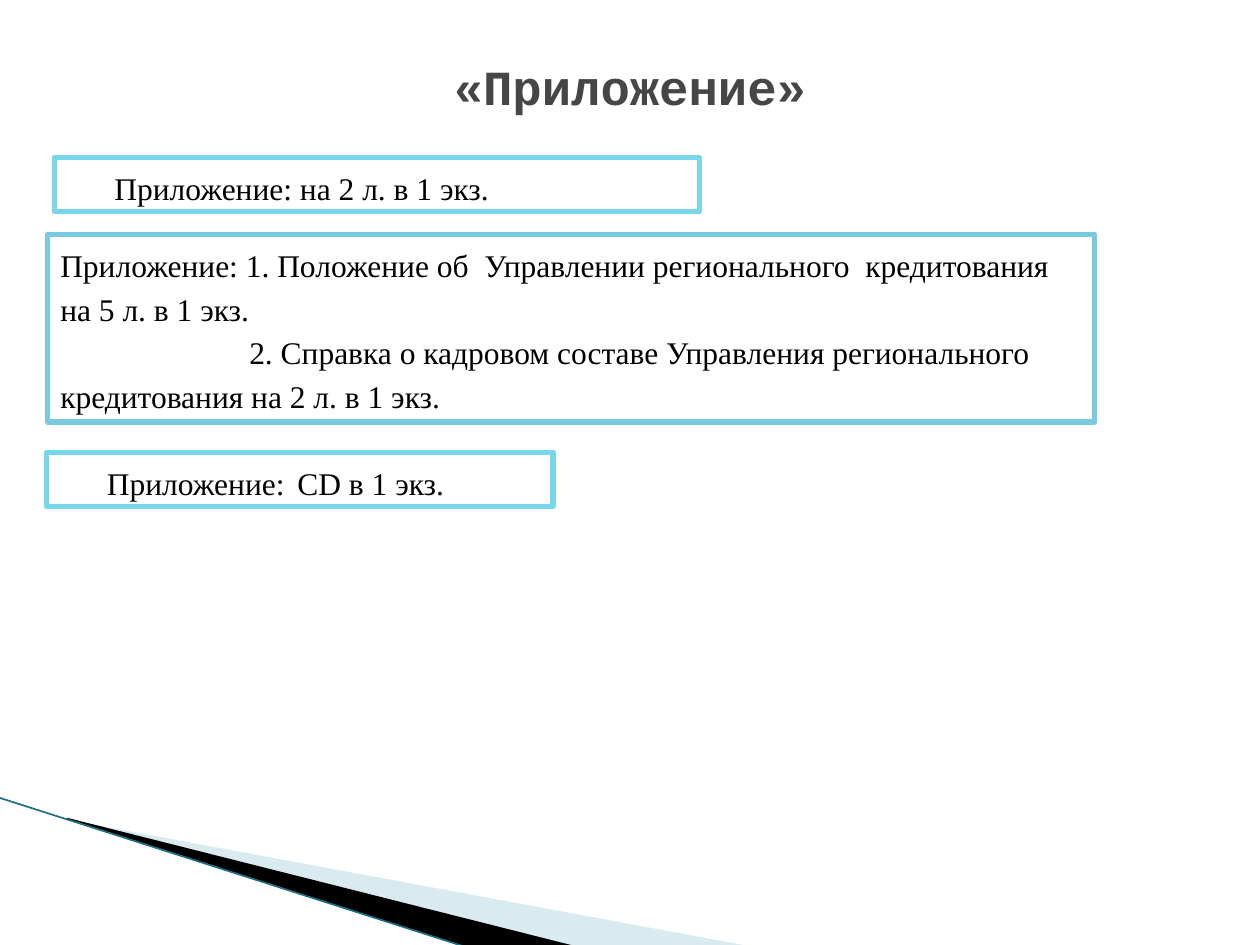
from dataclasses import dataclass

from lxml.etree import SubElement
from pptx import Presentation
from pptx.dml.color import RGBColor
from pptx.enum.shapes import MSO_CONNECTOR, MSO_SHAPE
from pptx.enum.text import MSO_ANCHOR, MSO_AUTO_SIZE, PP_ALIGN
from pptx.oxml.ns import qn
from pptx.util import Inches, Pt

WIDTH, HEIGHT = Inches(10), Inches(7.5)
SERIF = "Times New Roman"


@dataclass(frozen=True)
class Piece:
    text: str
    size: int = 18
    font: str = SERIF


@dataclass(frozen=True)
class Line:
    pieces: tuple[Piece, ...]
    indent: float = 0
    align: PP_ALIGN = PP_ALIGN.LEFT


@dataclass(frozen=True)
class Sample:
    left: float
    top: float
    width: float
    height: float
    border: str
    lines: tuple[Line, ...]


@dataclass(frozen=True)
class Wedge:
    corners: tuple[tuple[float, float], ...]
    color: str
    opacity: int = 100


def across(percent: float) -> int:
    return round(WIDTH * percent / 100)


def down(percent: float) -> int:
    return round(HEIGHT * percent / 100)


def rgb(color: str) -> RGBColor:
    return RGBColor.from_string(color)


def style_run(run, size: int, font: str, color: str, bold: bool = False) -> None:
    run.font.size = Pt(size)
    run.font.name = font
    run.font.bold = bold
    run.font.color.rgb = rgb(color)


def draw_wedge(slide, wedge: Wedge) -> None:
    points = [(across(x), down(y)) for x, y in wedge.corners]
    builder = slide.shapes.build_freeform(*points[0], scale=1.0)
    builder.add_line_segments(points[1:], close=True)
    facet = builder.convert_to_shape()
    facet.shadow.inherit = False
    facet.fill.solid()
    facet.fill.fore_color.rgb = rgb(wedge.color)
    facet.line.fill.background()
    if wedge.opacity < 100:
        tint = facet.fill._xPr.find(qn("a:solidFill"))[0]
        SubElement(tint, qn("a:alpha"), val=str(wedge.opacity * 1000))


def draw_edge(slide, start: tuple[float, float], end: tuple[float, float], color: str) -> None:
    edge = slide.shapes.add_connector(
        MSO_CONNECTOR.STRAIGHT, across(start[0]), down(start[1]), across(end[0]), down(end[1]))
    edge.line.color.rgb = rgb(color)
    edge.line.width = Pt(0.95)
    SubElement(edge._element.spPr, qn("a:effectLst"))


def draw_sample(slide, sample: Sample) -> None:
    frame = slide.shapes.add_shape(
        MSO_SHAPE.RECTANGLE, across(sample.left), down(sample.top),
        across(sample.width), down(sample.height))
    frame.shadow.inherit = False
    frame.fill.background()
    frame.line.color.rgb = rgb(sample.border)
    frame.line.width = Pt(3)
    SubElement(frame.line._get_or_add_ln(), qn("a:round"))
    body = frame.text_frame
    body.word_wrap = True
    body.auto_size = MSO_AUTO_SIZE.SHAPE_TO_FIT_TEXT
    body.vertical_anchor = MSO_ANCHOR.TOP
    for index, line in enumerate(sample.lines):
        paragraph = body.add_paragraph() if index else body.paragraphs[0]
        paragraph.alignment = line.align
        paragraph.line_spacing = 1.15
        paragraph._p.get_or_add_pPr().set("indent", str(across(line.indent)))
        for piece in line.pieces:
            run = paragraph.add_run()
            run.text = piece.text
            style_run(run, piece.size, piece.font, "000000")


def place_title(slide, text: str) -> None:
    title = slide.shapes.title
    title.left, title.top = across(5), down(4)
    title.width, title.height = across(90), down(10.27)
    title.text_frame.text = text
    title.text_frame.vertical_anchor = MSO_ANCHOR.MIDDLE
    heading = title.text_frame.paragraphs[0]
    heading.alignment = PP_ALIGN.CENTER
    style_run(heading.runs[0], 28, "Courier New", "464646", bold=True)


WEDGES = (
    Wedge(((5.5, 86.8), (59.5, 100.13), (45.6, 100.13), (5.5, 86.67)), "A0CBDC", 40),
    Wedge(((5.3, 86.53), (45.7, 100.13), (37.2, 100.27), (5.4, 86.67)), "000000"),
)

SAMPLES = (
    Sample(4.3, 16.67, 51.2, 5.73, "78D6EA", (
        Line((Piece("Приложение: на 2 л. в 1 экз."),), 3.8, PP_ALIGN.JUSTIFY),
    )),
    Sample(3.8, 24.8, 83.1, 19.87, "7ACBE0", (
        Line((Piece("Приложение: 1. Положение об  Управлении регионального  "
                    "кредитования  на 5 л. в 1 экз."),)),
        Line((Piece("2. Справка о кадровом составе Управления регионального "
                    "кредитования на 2 л. в 1 экз."),), 15),
    )),
    Sample(3.7, 47.87, 40.2, 5.73, "78D6EA", (
        Line((Piece("Приложение:"), Piece("  ", 16, "Calibri"), Piece("CD в 1 экз.")),
             3.8, PP_ALIGN.JUSTIFY),
    )),
)


def main() -> None:
    deck = Presentation()
    deck.slide_width, deck.slide_height = WIDTH, HEIGHT
    slide = deck.slides.add_slide(deck.slide_layouts[5])
    for wedge in WEDGES:
        draw_wedge(slide, wedge)
    draw_edge(slide, (-0.1, 84.4), (37.1, 100.27), "1B6F86")
    place_title(slide, "«Приложение»")
    for sample in SAMPLES:
        draw_sample(slide, sample)
    deck.save("out.pptx")


if __name__ == "__main__":
    main()
